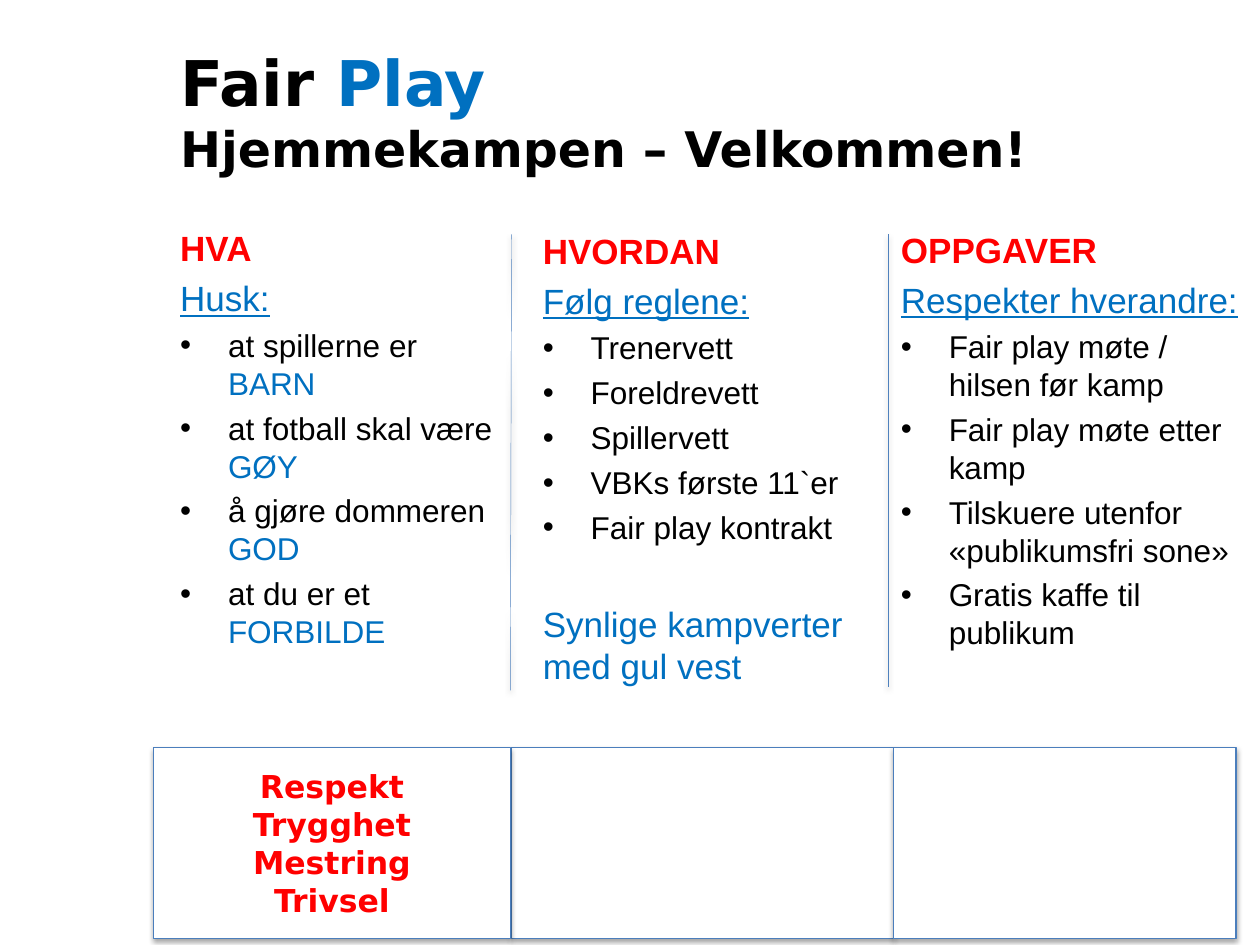
import copy
from dataclasses import dataclass

import pptx
import pptx.dml.color
import pptx.enum.shapes
import pptx.enum.text
import pptx.oxml
import pptx.oxml.ns
import pptx.util
from pptx.util import Inches

COLORS = {
    "black": "000000",
    "white": "FFFFFF",
    "red": "FF0000",
    "blue": "0070C0",
    "divider": "4F81BD",
    "border": "4B7EBC",
}
BODY_FONT = "Arial"
DISPLAY_FONT = "DejaVu Sans"
INDENT = 0.38
DIVIDER_TOP = 1.86
BOX_TOP, BOX_HEIGHT = 5.93, 1.52


@dataclass
class Column:
    left: float
    top: float
    width: float
    height: float
    heading: str
    subheading: str
    items: list[tuple[str, ...]]
    closing: str = ""


@dataclass
class Divider:
    bottom_x: float
    bottom_y: float
    top_x: float


@dataclass
class ValueBox:
    left: float
    width: float
    lines: tuple[str, ...] = ()


COLUMNS = [
    Column(1.33, 1.75, 2.72, 3.57, "HVA", "Husk:", [
        ("at spillerne er ", "BARN"),
        ("at fotball skal være ", "GØY"),
        ("å gjøre dommeren ", "GOD"),
        ("at du er et ", "FORBILDE"),
    ]),
    Column(7.05, 1.76, 2.95, 4.12, "OPPGAVER", "Respekter hverandre:", [
        ("Fair play møte / hilsen før kamp",),
        ("Fair play møte etter kamp",),
        ("Tilskuere utenfor «publikumsfri sone»",),
        ("Gratis kaffe til publikum",),
    ]),
    Column(4.21, 1.77, 2.84, 3.63, "HVORDAN", "Følg reglene:", [
        ("Trenervett",),
        ("Foreldrevett",),
        ("Spillervett",),
        ("VBKs første 11`er",),
        ("Fair play kontrakt",),
    ], "Synlige kampverter med gul vest"),
]
DIVIDERS = [Divider(4.05, 5.48, 4.06), Divider(7.05, 5.45, 7.05)]
BOXES = [
    ValueBox(4.06, 3.03),
    ValueBox(7.09, 2.72),
    ValueBox(1.22, 2.83, ("Respekt", "Trygghet", "Mestring", "Trivsel")),
]


def rgb(name: str) -> pptx.dml.color.RGBColor:
    return pptx.dml.color.RGBColor.from_string(COLORS[name])


def format_run(run, size: int, color: str, font: str = BODY_FONT,
               bold: bool = False, underline: bool = False) -> None:
    run.font.size = pptx.util.Pt(size)
    run.font.name = font
    run.font.bold = bold
    run.font.underline = underline
    run.font.color.rgb = rgb(color)


def add_run(paragraph, text: str, size: int, color: str, **style):
    run = paragraph.add_run()
    run.text = text
    format_run(run, size, color, **style)
    return run


def place(shape, left: float, top: float, width: float, height: float) -> None:
    shape.left, shape.top = Inches(left), Inches(top)
    shape.width, shape.height = Inches(width), Inches(height)


def set_bullet(paragraph, bulleted: bool) -> None:
    properties = paragraph._p.get_or_add_pPr()
    indent = Inches(INDENT) if bulleted else 0
    properties.set("marL", str(indent))
    properties.set("indent", str(-indent))
    if bulleted:
        font = pptx.oxml.parse_xml(
            f'<a:buFont {pptx.oxml.ns.nsdecls("a")} typeface="{BODY_FONT}"/>')
        mark = f'<a:buChar {pptx.oxml.ns.nsdecls("a")} char="•"/>'
        properties.append(font)
    else:
        mark = f'<a:buNone {pptx.oxml.ns.nsdecls("a")}/>'
    properties.append(pptx.oxml.parse_xml(mark))


def add_shadow(shape, opacity: int, distance: float) -> None:
    """Cast a soft shadow straight down; call after the line is set."""
    shape._element.spPr.append(pptx.oxml.parse_xml(
        f'<a:effectLst {pptx.oxml.ns.nsdecls("a")}>'
        f'<a:outerShdw blurRad="{pptx.util.Pt(3.1)}" dist="{pptx.util.Pt(distance)}"'
        ' dir="5400000" rotWithShape="0">'
        f'<a:srgbClr val="{COLORS["black"]}"><a:alpha val="{opacity * 1000}"/></a:srgbClr>'
        '</a:outerShdw></a:effectLst>'))


def fill_title(title) -> None:
    place(title, 1.33, 0.25, 7.13, 1.25)
    frame = title.text_frame
    frame.auto_size = pptx.enum.text.MSO_AUTO_SIZE.NONE
    frame.vertical_anchor = pptx.enum.text.MSO_ANCHOR.MIDDLE
    paragraph = frame.paragraphs[0]
    paragraph.alignment = pptx.enum.text.PP_ALIGN.LEFT
    style = {"font": DISPLAY_FONT, "bold": True}
    add_run(paragraph, "Fair", 36, "black", **style)
    play = add_run(paragraph, " Play ", 36, "blue", **style)
    paragraph.add_line_break()
    # The break takes the size of its line, not the placeholder's default.
    paragraph._p[-1].append(copy.deepcopy(play._r.rPr))
    add_run(paragraph, "Hjemmekampen – Velkommen!", 28, "black", **style)


def fill_column(shape, column: Column) -> None:
    place(shape, column.left, column.top, column.width, column.height)
    frame = shape.text_frame
    frame.word_wrap = True
    frame.auto_size = pptx.enum.text.MSO_AUTO_SIZE.NONE
    frame.vertical_anchor = pptx.enum.text.MSO_ANCHOR.TOP

    def start_paragraph(space: float, bulleted: bool = False):
        paragraph = frame.add_paragraph()
        set_bullet(paragraph, bulleted)
        paragraph.space_before = pptx.util.Pt(space)
        return paragraph

    heading = frame.paragraphs[0]
    set_bullet(heading, False)
    heading.space_before = pptx.util.Pt(0)
    add_run(heading, column.heading, 20, "red", bold=True)
    add_run(start_paragraph(4.6), column.subheading, 20, "blue", underline=True)
    for item in column.items:
        paragraph = start_paragraph(4.1, bulleted=True)
        for text, color in zip(item, ("black", "blue")):
            add_run(paragraph, text, 18, color)
    if column.closing:
        add_run(start_paragraph(32.5), column.closing, 20, "blue")


def add_divider(slide, divider: Divider) -> None:
    line = slide.shapes.add_connector(
        pptx.enum.shapes.MSO_CONNECTOR.STRAIGHT,
        Inches(divider.bottom_x), Inches(divider.bottom_y),
        Inches(divider.top_x), Inches(DIVIDER_TOP))
    line.line.color.rgb = rgb("divider")
    line.line.width = pptx.util.Pt(0.25)
    add_shadow(line, 38, 1.6)


def add_value_box(slide, box: ValueBox) -> None:
    shape = slide.shapes.add_shape(
        pptx.enum.shapes.MSO_SHAPE.RECTANGLE,
        Inches(box.left), Inches(BOX_TOP), Inches(box.width), Inches(BOX_HEIGHT))
    shape.fill.solid()
    shape.fill.fore_color.rgb = rgb("white")
    shape.line.color.rgb = rgb("border")
    shape.line.width = pptx.util.Pt(0.75)
    add_shadow(shape, 35, 1.8)
    if box.lines:
        frame = shape.text_frame
        frame.text = "\n".join(box.lines)
        frame.vertical_anchor = pptx.enum.text.MSO_ANCHOR.MIDDLE
        for paragraph in frame.paragraphs:
            paragraph.alignment = pptx.enum.text.PP_ALIGN.CENTER
            format_run(paragraph.runs[0], 18, "red", font=DISPLAY_FONT, bold=True)


def main() -> None:
    presentation = pptx.Presentation()
    presentation.slide_width, presentation.slide_height = Inches(10), Inches(7.5)
    slide = presentation.slides.add_slide(presentation.slide_layouts[3])
    fill_title(slide.shapes.title)
    middle = slide.shapes.add_textbox(0, 0, 0, 0)
    bodies = [slide.placeholders[1], slide.placeholders[2], middle]
    for shape, column in zip(bodies, COLUMNS):
        fill_column(shape, column)
    for divider, box in zip(DIVIDERS, BOXES):
        add_divider(slide, divider)
        add_value_box(slide, box)
    add_value_box(slide, BOXES[-1])
    presentation.save("out.pptx")


if __name__ == "__main__":
    main()
